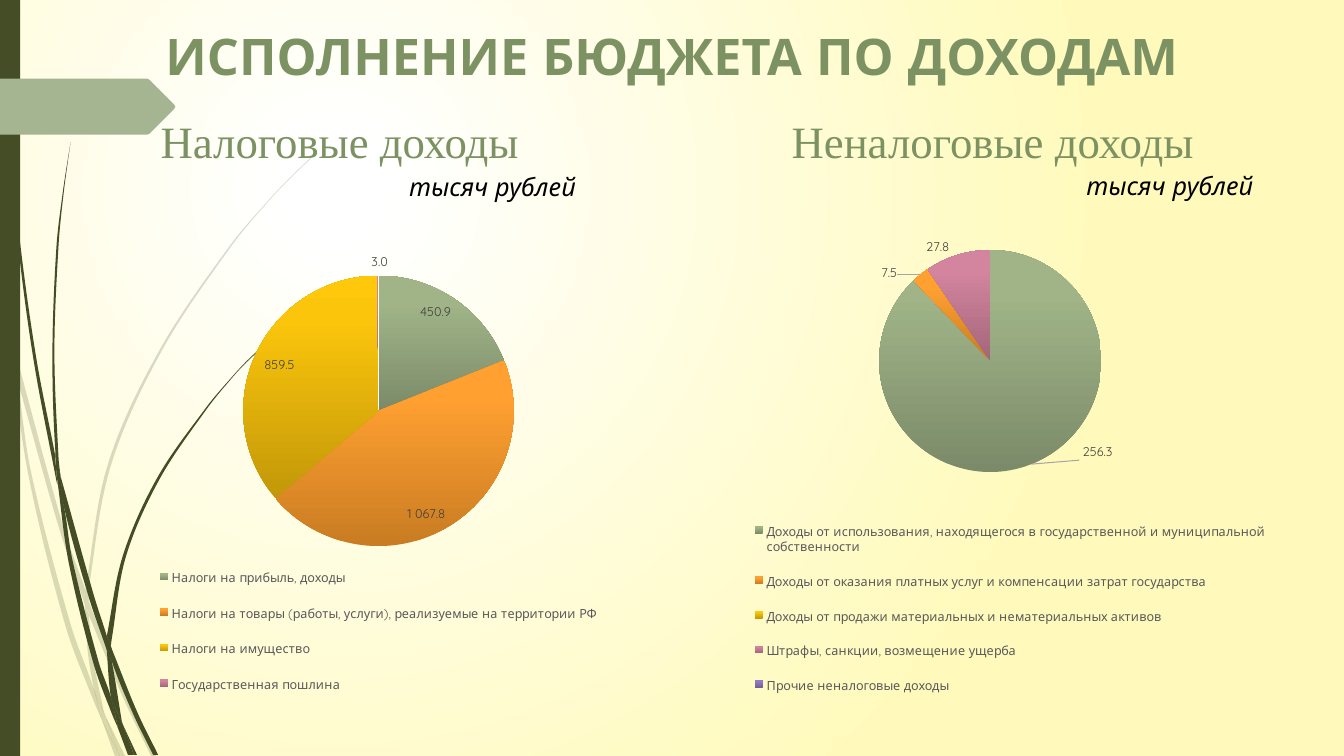
from copy import deepcopy
from dataclasses import dataclass
from itertools import pairwise

from lxml.etree import SubElement
from pptx import Presentation
from pptx.chart.data import CategoryChartData
from pptx.dml.color import RGBColor as RGB
from pptx.enum.chart import XL_CHART_TYPE as CT, XL_LABEL_POSITION as LP, XL_LEGEND_POSITION as LEG
from pptx.enum.shapes import MSO_SHAPE
from pptx.enum.text import MSO_ANCHOR, MSO_AUTO_SIZE as FIT, PP_ALIGN
from pptx.oxml import parse_xml
from pptx.oxml.ns import nsdecls, qn
from pptx.util import Cm, Pt


@dataclass(frozen=True)
class Theme:
    sans: str = "Quicksand"
    serif: str = "Times New Roman"
    title_size: float = 36
    heading_size: float = 32
    unit_size: float = 18
    chart_size: float = 10
    label_size: float = 9
    stalk: str = "444D26"
    tag: str = "A5B592"
    heading: str = "7D9263"
    outline: str = "536142"
    black: str = "000000"
    legend: str = "595959"
    label: str = "404040"
    leader: str = "A6A6A6"
    background: tuple = ((5, "FFFFFF"), (100, "FFFABB"))
    slices: tuple = (("7B8B69", "A0B488", "A1B688"), ("C97C22", "FFA031", "FFA133"),
                     ("C29809", "FBC50C", "FFC80A"), ("A2667A", "D3849F", "D5849F"),
                     ("735D96", "9578C3", "9677C5"))


T = Theme()
NUMBER_FORMAT = r"#\ ##0.0"

# Each leaf is a pair of edges, running out and back, in hundredths of an inch
PALE_LEAVES = [
    ([(11, 350), (9, 322), (0, 282)], [(0, 299), (10, 344), (11, 350)]),
    ([(17, 376), (58, 522), (84, 599)], [(85, 586), (62, 520), (14, 345)]),
    ([(88, 610), (123, 694), (150, 750)], [(155, 750), (127, 692), (92, 607), (88, 596)]),
    ([(105, 711), (119, 750)], [(124, 750), (105, 711)]),
    ([(11, 350), (28, 470), (65, 621), (92, 693), (101, 714)],
     [(99, 707), (93, 683), (70, 619), (31, 469), (17, 376), (11, 350)]),
    ([(84, 599), (87, 646), (93, 683), (96, 692), (105, 711)],
     [(103, 706), (91, 646), (88, 610), (84, 599)]),
    ([(88, 596), (88, 584), (110, 462), (160, 349), (229, 245), (268, 198), (290, 175), (312, 154)],
     [(312, 153), (289, 175), (268, 197), (228, 244), (158, 348), (107, 461), (85, 584), (85, 586)]),
    ([(101, 714), (114, 750)], [(119, 750), (101, 714)]),
    ([(84, 599), (88, 608), (88, 610)], [(88, 596), (85, 586)]),
    ([(93, 683), (99, 707), (101, 714), (119, 750)], [(119, 750), (105, 711), (96, 692), (93, 683)]),
]
DARK_LEAVES = [
    ([(3, 0), (4, 48), (7, 110), (17, 233), (33, 355), (56, 477), (57, 481)],
     [(55, 457), (55, 453), (36, 355), (19, 232), (8, 109), (5, 48), (4, 0)]),
    ([(60, 472), (64, 505), (88, 592), (106, 645)], [(106, 633), (106, 631), (93, 590), (60, 472)]),
    ([(110, 641), (111, 656), (132, 708), (152, 749)], [(157, 749), (136, 706), (113, 649), (110, 641)]),
    ([(57, 477), (68, 557), (93, 659), (111, 708), (117, 722)],
     [(116, 717), (110, 691), (98, 657), (72, 556), (64, 505), (57, 477)]),
    ([(60, 472), (58, 453), (54, 349), (58, 245), (63, 193), (70, 141)],
     [(70, 141), (62, 193), (56, 245), (52, 349), (55, 449), (60, 472)]),
    ([(122, 719), (133, 749)], [(136, 749), (122, 719)]),
    ([(55, 449), (55, 453), (57, 477), (64, 505)], [(60, 472), (55, 449)]),
    ([(110, 641), (111, 633), (125, 552), (158, 476), (205, 406), (231, 374), (245, 359), (261, 344)],
     [(260, 344), (245, 358), (231, 373), (204, 405), (156, 474), (122, 551), (106, 631)]),
    ([(117, 722), (127, 749)], [(131, 749), (117, 722)]),
    ([(106, 645), (110, 691), (116, 706), (122, 719)], [(121, 716), (111, 656), (109, 651), (106, 645)]),
    ([(106, 631), (106, 633), (106, 645)], [(111, 656), (110, 641), (106, 631)]),
    ([(110, 691), (116, 717), (117, 722), (130, 749)], [(133, 749), (122, 719), (116, 706), (110, 691)]),
]
TAG = [(0, 78), (146, 78), (148, 79), (173, 104), (174, 106), (173, 108), (148, 133), (146, 133.5), (0, 133.5)]

TAXES = [("Налоги на прибыль, доходы", 450.9),
         ("Налоги на товары (работы, услуги), реализуемые на территории РФ", 1067.8),
         ("Налоги на имущество", 859.5),
         ("Государственная пошлина", 3)]
OTHER_INCOME = [
    ("Доходы от использования, находящегося в государственной и муниципальной собственности", 256.3),
    ("Доходы от оказания платных услуг и компенсации затрат государства", 7.5),
    ("Доходы от продажи материальных и нематериальных активов", None),
    ("Штрафы, санкции, возмещение ущерба", 27.8),
    ("Прочие неналоговые доходы", None)]


def handles(edge):
    """Give the two Bezier handles of each segment, as offsets from its ends."""
    z = [10 * complex(*point) for point in edge]
    slopes = [(c - a) / (abs(b - a) + abs(c - b)) for a, b, c in zip([z[0], *z], z, [*z[1:], z[-1]])]
    return [(u * abs(b - a) / 3, -v * abs(b - a) / 3)
            for (a, b), (u, v) in zip(pairwise(z), pairwise(slopes))]


def paint(sp, color):
    sp.shadow.inherit = False
    sp.fill.solid()
    sp.fill.fore_color.rgb = RGB.from_string(color)
    sp.line.fill.background()


def add_outline(shapes, points, color):
    (x, y), *rest = [(10 * px, 10 * py) for px, py in points]
    pen = shapes.build_freeform(x, y, scale=Cm(2.54) / 1000)
    pen.add_line_segments(rest, close=True)
    sp = pen.convert_to_shape()
    paint(sp, color)
    return sp


def bend(sp, out, back):
    """Turn the straight segments of both edges into curves."""
    steps = list(sp._element.find(".//" + qn("a:path")))
    pts = [step.find(qn("a:pt")) for step in steps]
    offsets = [None, *handles(out), None, *handles(back)]
    for i, pair in enumerate(offsets):
        if pair is None:
            continue
        for pt, offset in zip((pts[i - 1], pts[i]), pair):
            handle = SubElement(steps[i], qn("a:pt"))
            handle.set("x", str(round(int(pt.get("x")) + offset.real)))
            handle.set("y", str(round(int(pt.get("y")) + offset.imag)))
        steps[i].append(pts[i])
        steps[i].tag = qn("a:cubicBezTo")


def add_leaves(shapes, leaves, opacity=100):
    parts = []
    for out, back in leaves:
        sp = add_outline(shapes, out + back, T.stalk)
        bend(sp, out, back)
        if opacity < 100:
            color = sp.fill._xPr.find(".//" + qn("a:srgbClr"))
            SubElement(color, qn("a:alpha"), val=str(opacity * 1000))
        parts.append(sp)
    shapes.add_group_shape(parts)


def set_gradient(fill, stops):
    fill.gradient()
    grad = fill._xPr.find(qn("a:gradFill"))
    gs_list = grad.find(qn("a:gsLst"))
    while len(gs_list) < len(stops):
        gs_list.append(deepcopy(gs_list[-1]))
    for gs, (position, color) in zip(fill.gradient_stops, stops):
        gs.position = position / 100
        gs.color.rgb = RGB.from_string(color)
    return grad


def set_background(slide):
    grad = set_gradient(slide.background.fill, T.background)
    grad.replace(grad.find(qn("a:lin")), parse_xml(
        f'<a:path {nsdecls("a")} path="circle">'
        '<a:fillToRect l="50000" t="50000" r="100000" b="100000"/></a:path>'))


def style_font(font, name, size, color):
    font.name, font.size = name, Pt(size)
    font.color.rgb = RGB.from_string(color)


def write(tf, text, name, size, color, align=PP_ALIGN.CENTER, outline=0, bold=False, italic=False):
    p = tf.paragraphs[0]
    p.alignment = align
    r = p.add_run()
    r.text = text
    r.font.bold, r.font.italic = bold, italic
    style_font(r.font, name, size, color)
    if outline:
        r.font._element.insert(0, parse_xml(
            f'<a:ln {nsdecls("a")} w="{Pt(outline)}"><a:solidFill>'
            f'<a:srgbClr val="{T.outline}"/></a:solidFill></a:ln>'))


def add_title(slide, text):
    sp = slide.shapes.title
    sp.left, sp.top, sp.width, sp.height = Cm(0), Cm(0.25), Cm(33.87), Cm(2.31)
    tf = sp.text_frame
    tf.auto_size, tf.vertical_anchor, tf.word_wrap = FIT.NONE, MSO_ANCHOR.MIDDLE, True
    write(tf, text, T.sans, T.title_size, T.heading, outline=0.25, bold=True)
    slide.shapes._spTree.append(sp._element)


def add_label(shapes, box, *args, **kwargs):
    tf = shapes.add_textbox(*map(Cm, box)).text_frame
    tf.auto_size, tf.word_wrap = FIT.SHAPE_TO_FIT_TEXT, False
    write(tf, *args, **kwargs)


def manual_layout(inner, **values):
    tags = "".join(f'<c:{key} val="{value}"/>' for key, value in values.items())
    return parse_xml(f'<c:layout {nsdecls("c")}><c:manualLayout>{inner}{tags}</c:manualLayout></c:layout>')


def place(part, index, box, target=""):
    """Fix a plot area or legend at a box given in fractions of the chart."""
    for old in part.findall(qn("c:layout")):
        part.remove(old)
    inner = target + '<c:xMode val="edge"/><c:yMode val="edge"/>'
    part.insert(index, manual_layout(inner, **dict(zip("xywh", box))))


def move_label_outside(point, dx, dy):
    label = point.data_label
    style_font(label.font, T.sans, T.label_size, T.label)
    label.position = LP.OUTSIDE_END
    dLbl = label._dLbl
    dLbl.insert(1, parse_xml(f'<c:numFmt {nsdecls("c")} formatCode="{NUMBER_FORMAT}" sourceLinked="0"/>'))
    if dx or dy:
        dLbl.insert(1, manual_layout("", x=dx, y=dy))


def add_pie(shapes, box, rows, plot_box, outside, legend_box=None):
    """outside maps a slice number to the shift of its outer label."""
    data = CategoryChartData(number_format=NUMBER_FORMAT)
    data.categories = [f"{name}\n" for name, _ in rows]
    data.add_series("Series 1", [value for _, value in rows])
    chart = shapes.add_chart(CT.PIE, *map(Cm, box), data).chart
    chart.has_title = False
    style_font(chart.font, T.sans, T.chart_size, T.black)
    chart.has_legend = True
    legend = chart.legend
    legend.position, legend.include_in_layout = LEG.BOTTOM, False
    style_font(legend.font, T.sans, T.label_size, T.legend)
    if legend_box:
        place(legend._element, 1, legend_box)
    plot_area = chart._chartSpace.find(".//" + qn("c:plotArea"))
    place(plot_area, 0, plot_box, '<c:layoutTarget val="inner"/>')
    plot = chart.plots[0]
    plot.vary_by_categories = True
    series = plot.series[0]
    labels = series.data_labels
    labels.show_value, labels.position = True, LP.INSIDE_END
    labels.number_format, labels.number_format_is_linked = NUMBER_FORMAT, False
    style_font(labels.font, T.sans, T.label_size, T.label)
    for i in range(len(rows)):
        fill = series.points[i].format.fill
        set_gradient(fill, list(zip((0, 80, 100), T.slices[i])))
        fill.gradient_angle = 90
    for i, shift in outside.items():
        move_label_outside(series.points[i], *shift)
    dLbls = labels._element
    if dLbls.find(qn("c:showLeaderLines")) is None:
        SubElement(dLbls, qn("c:showLeaderLines"), val="1")
    dLbls.append(parse_xml(
        f'<c:leaderLines {nsdecls("c", "a")}><c:spPr><a:ln w="{Pt(0.75)}"><a:solidFill>'
        f'<a:srgbClr val="{T.leader}"/></a:solidFill></a:ln></c:spPr></c:leaderLines>'))


def main():
    prs = Presentation()
    prs.slide_width, prs.slide_height = Cm(33.87), Cm(19.05)
    slide = prs.slides.add_slide(prs.slide_layouts[5])
    shapes = slide.shapes
    set_background(slide)
    add_leaves(shapes, PALE_LEAVES, opacity=20)
    add_leaves(shapes, DARK_LEAVES)
    paint(shapes.add_shape(MSO_SHAPE.RECTANGLE, 0, 0, Cm(0.51), prs.slide_height), T.stalk)
    add_outline(shapes, TAG, T.tag)
    add_title(slide, "ИСПОЛНЕНИЕ БЮДЖЕТА ПО ДОХОДАМ")
    for text, left, width in (("Налоговые доходы", 3.61, 9.91), ("Неналоговые доходы", 19.51, 11.02)):
        add_label(shapes, (left, 2.74, width, 1.63), text, T.serif, T.heading_size, T.heading, outline=0.75)
    for left, top in ((27.13, 4.17), (10.06, 4.19)):
        add_label(shapes, (left, top, 4.78, 1.02), "тысяч рублей", T.sans, T.unit_size, T.black,
                  align=PP_ALIGN.LEFT, italic=True)
    add_pie(shapes, (16.89, 5.72, 16.46, 12.75), OTHER_INCOME, (0.32, 0.04, 0.34, 0.45),
            {0: (0.07, -0.05), 1: (-0.03, 0.02), 3: (-0.01, 0.01)}, legend_box=(0.11, 0.58, 0.82, 0.38))
    add_pie(shapes, (2.21, 5.99, 14.66, 11.96), TAXES, (0.26, 0.08, 0.48, 0.57), {3: (0, 0)})
    prs.save("out.pptx")


if __name__ == "__main__":
    main()
